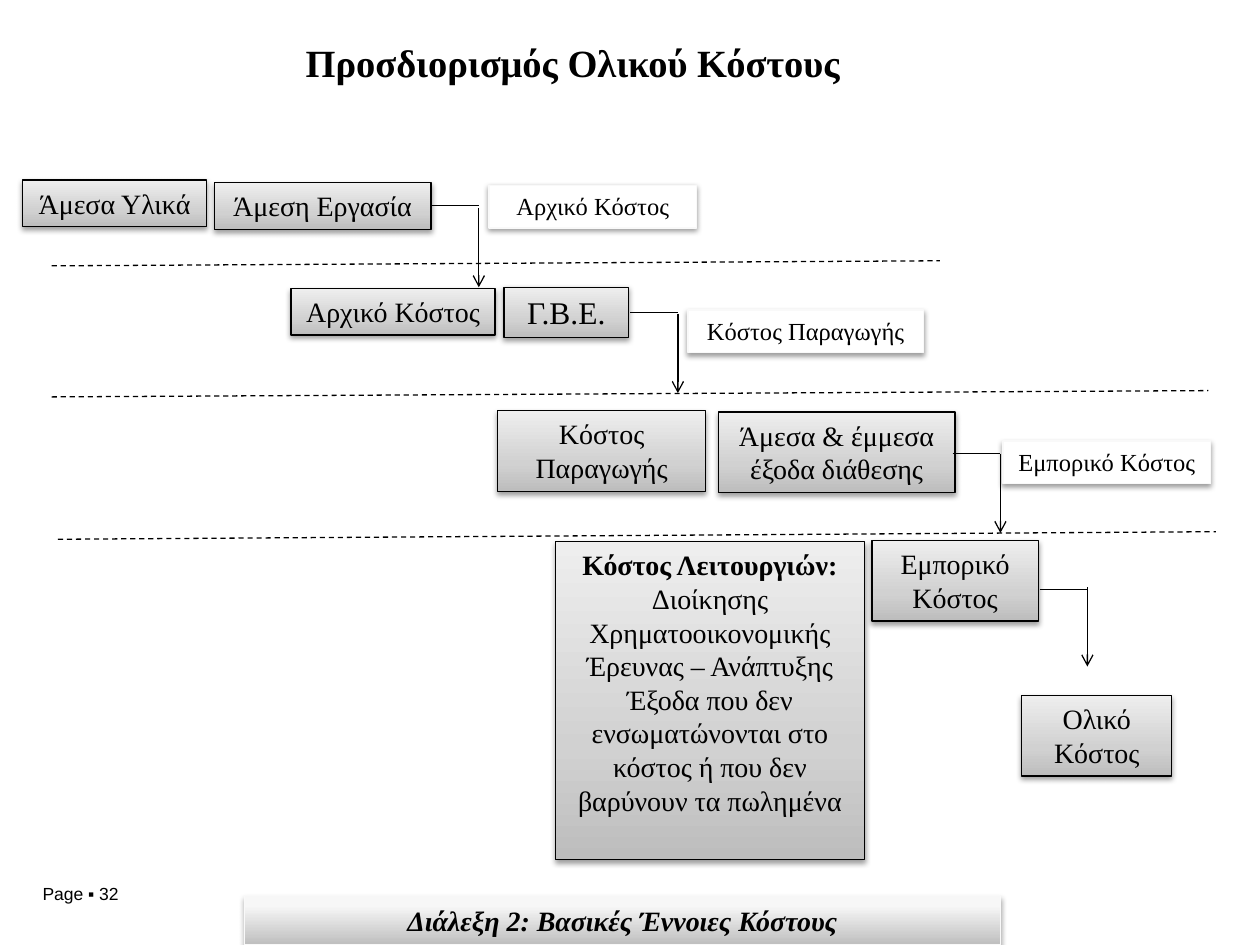
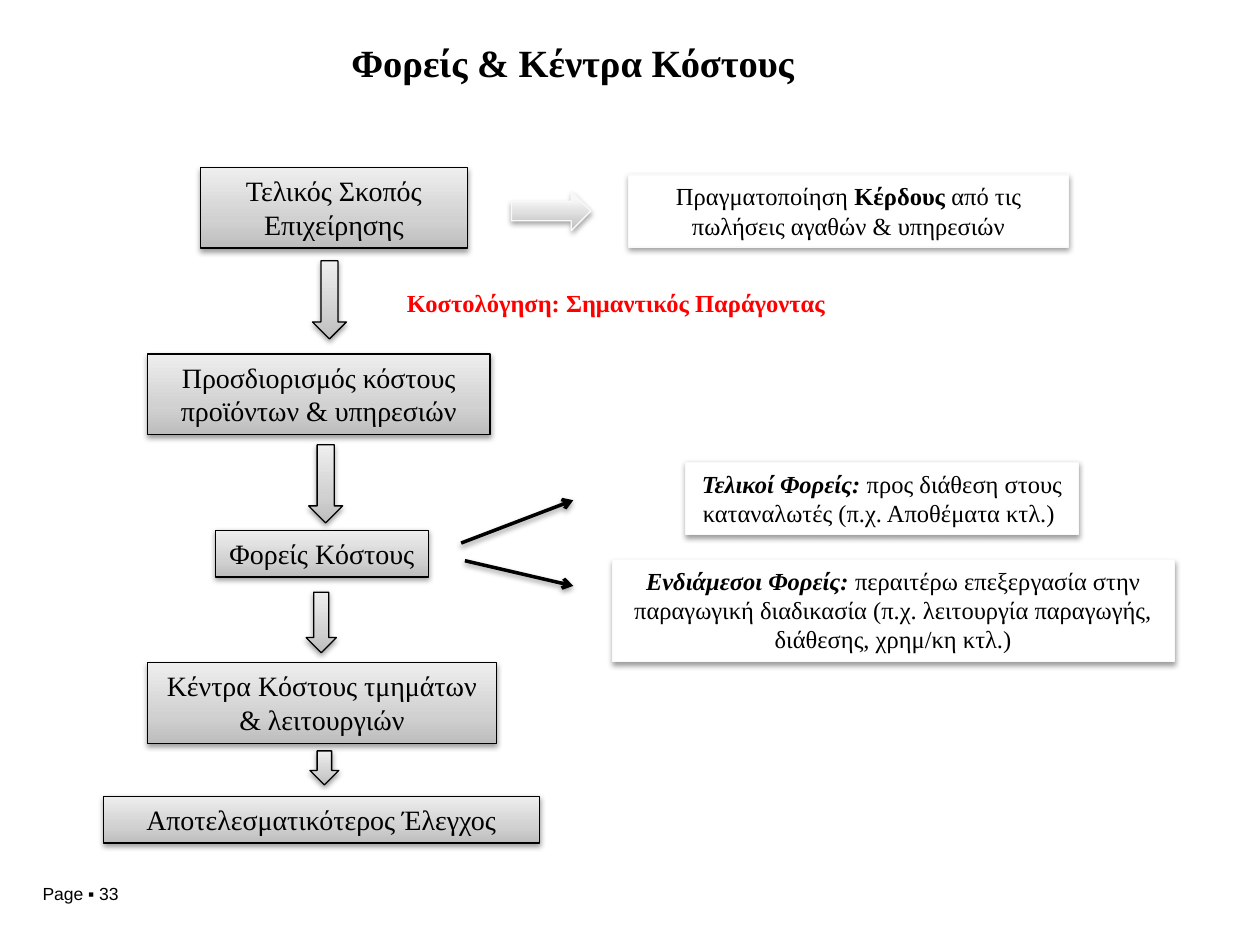
from pptx import Presentation
from pptx.util import Inches, Pt
from pptx.dml.color import RGBColor
from pptx.enum.dml import MSO_LINE as Dash
from pptx.enum.shapes import MSO_CONNECTOR as Link, MSO_SHAPE as Form
from pptx.enum.text import MSO_ANCHOR as Anchor, PP_ALIGN as Align
from pptx.oxml.ns import qn
from lxml.etree import SubElement as Sub

BLACK = RGBColor(0, 0, 0)
WHITE = RGBColor(255, 255, 255)
RED = RGBColor(255, 0, 0)
PALE = RGBColor(0xF9, 0xF9, 0xF9)
GREY = ((0, RGBColor(0xBD, 0xBD, 0xBD)), (35, RGBColor(0xD1, 0xD1, 0xD1)),
        (100, RGBColor(0xEE, 0xEE, 0xEE)))
LIGHT = ((0, RGBColor(0xBE, 0xBE, 0xBE)), (80, RGBColor(0xF7, 0xF7, 0xF7)),
         (100, RGBColor(0xF8, 0xF8, 0xF8)))
SERIF, SANS = "Times New Roman", "Arial"


def write(shape, *paras, size=16, font=SERIF, color=BLACK, style="",
          align=Align.CENTER, anchor=Anchor.TOP, inset=(0.1, 0.05), space=None):
    """Fill a shape; a paragraph is a string or a list of (text, style) runs.

    A style is any mix of the letters b (bold) and i (italic).
    """
    frame = shape.text_frame
    frame.word_wrap = True
    frame.vertical_anchor = anchor
    frame.margin_left = frame.margin_right = Inches(inset[0])
    frame.margin_top = frame.margin_bottom = Inches(inset[1])
    for n, runs in enumerate(paras):
        para = frame.add_paragraph() if n else frame.paragraphs[0]
        para.alignment = align
        if space:
            para.line_spacing = space
        for text, look in [(runs, style)] if isinstance(runs, str) else runs:
            run = para.add_run()
            run.text = text
            face = run.font
            face.name, face.size = font, Pt(size)
            face.bold, face.italic = "b" in look, "i" in look
            face.color.rgb = color


def shade(fill, stops):
    """Blend the stops upwards, the first one at the bottom."""
    fill.gradient()
    fill.gradient_angle = 90
    # python-pptx cannot add stops, so the list is rebuilt
    items = fill._xPr.find(qn("a:gradFill")).find(qn("a:gsLst"))
    for old in list(items):
        items.remove(old)
    for pos, color in stops:
        stop = Sub(items, qn("a:gs"), pos=str(pos * 1000))
        Sub(stop, qn("a:srgbClr"), val=str(color))


def cast(effects, alpha=38, drop=20000):
    """Add a soft shadow that falls straight down."""
    outer = Sub(effects, qn("a:outerShdw"), blurRad="40000", dist=str(drop),
                dir="5400000", rotWithShape="0")
    color = Sub(outer, qn("a:srgbClr"), val=str(BLACK))
    Sub(color, qn("a:alpha"), val=str(alpha * 1000))


def block(slide, at, form=Form.RECTANGLE, fill=GREY, edge=BLACK, width=0.75,
          shadow=True):
    shape = slide.shapes.add_shape(form, *map(Inches, at))
    if isinstance(fill, RGBColor):
        shape.fill.solid()
        shape.fill.fore_color.rgb = fill
    else:
        shade(shape.fill, fill)
    shape.line.color.rgb = edge
    shape.line.width = Pt(width)
    shape.shadow.inherit = False
    if shadow:
        effects = shape._element.spPr.find(qn("a:effectLst"))
        cast(effects, *((35, 23000) if fill is LIGHT else ()))
    return shape


def box(slide, at, *paras, **fmt):
    write(block(slide, at), *paras, **fmt)


def label(slide, at, *paras):
    write(block(slide, at, fill=WHITE, edge=PALE), *paras, size=14)


def line(slide, start, end, width=0.75, head=False, dash=False, shadow=False):
    link = slide.shapes.add_connector(Link.STRAIGHT, *map(Inches, start + end))
    link.line.color.rgb = BLACK
    link.line.width = Pt(width)
    if dash:
        link.line.dash_style = Dash.DASH
    if head:
        Sub(link.line._get_or_add_ln(), qn("a:tailEnd"), type="arrow")
    effects = Sub(link._element.spPr, qn("a:effectLst"))
    if shadow:
        cast(effects)


def elbow(slide, x, y, top):
    """Draw a short line right, then an arrow down from height top."""
    turn = x + 0.38
    line(slide, (x, y), (turn, y))
    line(slide, (turn, top), (turn, top + 0.63), head=True)


def start(deck, title, page):
    slide = deck.slides.add_slide(deck.slide_layouts[6])
    for at, text, fmt in (
            ((0.24, 6.96, 1.47, 0.27), f"Page ▪ {page}",
             dict(size=10, font=SANS, align=Align.LEFT)),
            ((0.34, 0.3, 8.41, 0.55), title,
             dict(size=22, style="b", inset=(0, 0.05), space=0.9))):
        write(slide.shapes.add_textbox(*map(Inches, at)), text, **fmt)
    return slide


def total(deck):
    slide = start(deck, "Προσδιορισμός Ολικού Κόστους", 32)
    box(slide, (8.11, 5.52, 1.19, 0.64), "Ολικό Κόστος")
    box(slide, (4, 2.28, 0.99, 0.4), "Γ.Β.Ε.", size=18)
    for at, text in (
            ((1.7, 1.45, 1.72, 0.37), "Άμεση Εργασία"),
            ((0.18, 1.43, 1.46, 0.37), "Άμεσα Υλικά"),
            ((3.95, 3.26, 1.65, 0.64), "Κόστος Παραγωγής"),
            ((2.31, 2.29, 1.62, 0.37), "Αρχικό Κόστος"),
            ((5.7, 3.27, 1.88, 0.64), "Άμεσα & έμμεσα έξοδα διάθεσης"),
            ((6.92, 4.29, 1.32, 0.64), "Εμπορικό Κόστος")):
        box(slide, at, text)
    for x, y, top in ((3.42, 1.63, 1.65), (5, 2.48, 2.49),
                      (7.56, 3.6, 3.6), (8.25, 4.68, 4.66)):
        elbow(slide, x, y, top)
    box(slide, (4.41, 4.3, 2.45, 2.52), [("Κόστος Λειτουργιών:", "b")],
        "Διοίκησης", "Χρηματοοικονομικής", "Έρευνας – Ανάπτυξης",
        "Έξοδα που δεν ενσωματώνονται στο κόστος ή που δεν βαρύνουν τα πωλημένα")
    label(slide, (3.88, 1.47, 1.65, 0.34), "Αρχικό Κόστος")
    label(slide, (5.46, 2.46, 1.87, 0.34), "Κόστος Παραγωγής")
    label(slide, (7.96, 3.5, 1.65, 0.34), "Εμπορικό Κόστος")
    for left, right in (((0.41, 2.11), (7.46, 2.07)),
                        ((0.41, 3.15), (9.59, 3.1)),
                        ((0.46, 4.28), (9.65, 4.22))):
        line(slide, left, right, dash=True)
    band = block(slide, (1.94, 7.11, 6, 0.39), fill=LIGHT, edge=PALE)
    write(band, "Διάλεξη 2: Βασικές Έννοιες Κόστους", style="bi",
          anchor=Anchor.MIDDLE, inset=(0, 0))


def centres(deck):
    slide = start(deck, "Φορείς & Κέντρα Κόστους", 33)
    for at, text in (
            ((0.82, 6.32, 3.46, 0.37), "Αποτελεσματικότερος Έλεγχος"),
            ((1.59, 1.33, 2.12, 0.64), "Τελικός Σκοπός Επιχείρησης"),
            ((1.17, 2.81, 2.72, 0.64),
             "Προσδιορισμός κόστους προϊόντων & υπηρεσιών"),
            ((1.17, 5.26, 2.77, 0.64), "Κέντρα Κόστους τμημάτων & λειτουργιών"),
            ((1.71, 4.21, 1.69, 0.37), "Φορείς Κόστους")):
        box(slide, at, text)
    label(slide, (4.99, 1.39, 3.49, 0.57),
          [("Πραγματοποίηση ", ""), ("Κέρδους", "b"),
           (" από τις πωλήσεις αγαθών & υπηρεσιών", "")])
    label(slide, (5.44, 3.67, 3.12, 0.57),
          [("Τελικοί Φορείς: ", "bi"),
           ("προς διάθεση στους καταναλωτές (π.χ. Αποθέματα κτλ.) ", "")])
    label(slide, (4.86, 4.44, 4.46, 0.81),
          [("Ενδιάμεσοι Φορείς: ", "bi"),
           ("περαιτέρω επεξεργασία στην παραγωγική διαδικασία "
            "(π.χ. λειτουργία παραγωγής, διάθεσης, χρημ/κη κτλ.)", "")])
    block(slide, (4.06, 1.52, 0.63, 0.31), Form.RIGHT_ARROW, LIGHT, PALE)
    for at in ((2.48, 2.07, 0.27, 0.62), (2.45, 3.53, 0.27, 0.62),
               (2.43, 4.7, 0.24, 0.48), (2.46, 5.96, 0.23, 0.27)):
        block(slide, at, Form.DOWN_ARROW)
    factor = block(slide, (3.04, 2.24, 3.7, 0.34), fill=WHITE, edge=WHITE,
                   width=2, shadow=False)
    write(factor, "Κοστολόγηση: Σημαντικός Παράγοντας", size=14, color=RED,
          style="b")
    for tail, tip in (((3.66, 4.31), (4.55, 3.97)),
                      ((3.69, 4.45), (4.55, 4.65))):
        line(slide, tail, tip, width=2, head=True, shadow=True)


def main():
    deck = Presentation()
    deck.slide_width, deck.slide_height = Inches(10), Inches(7.5)
    total(deck)
    centres(deck)
    deck.save("out.pptx")


if __name__ == "__main__":
    main()
